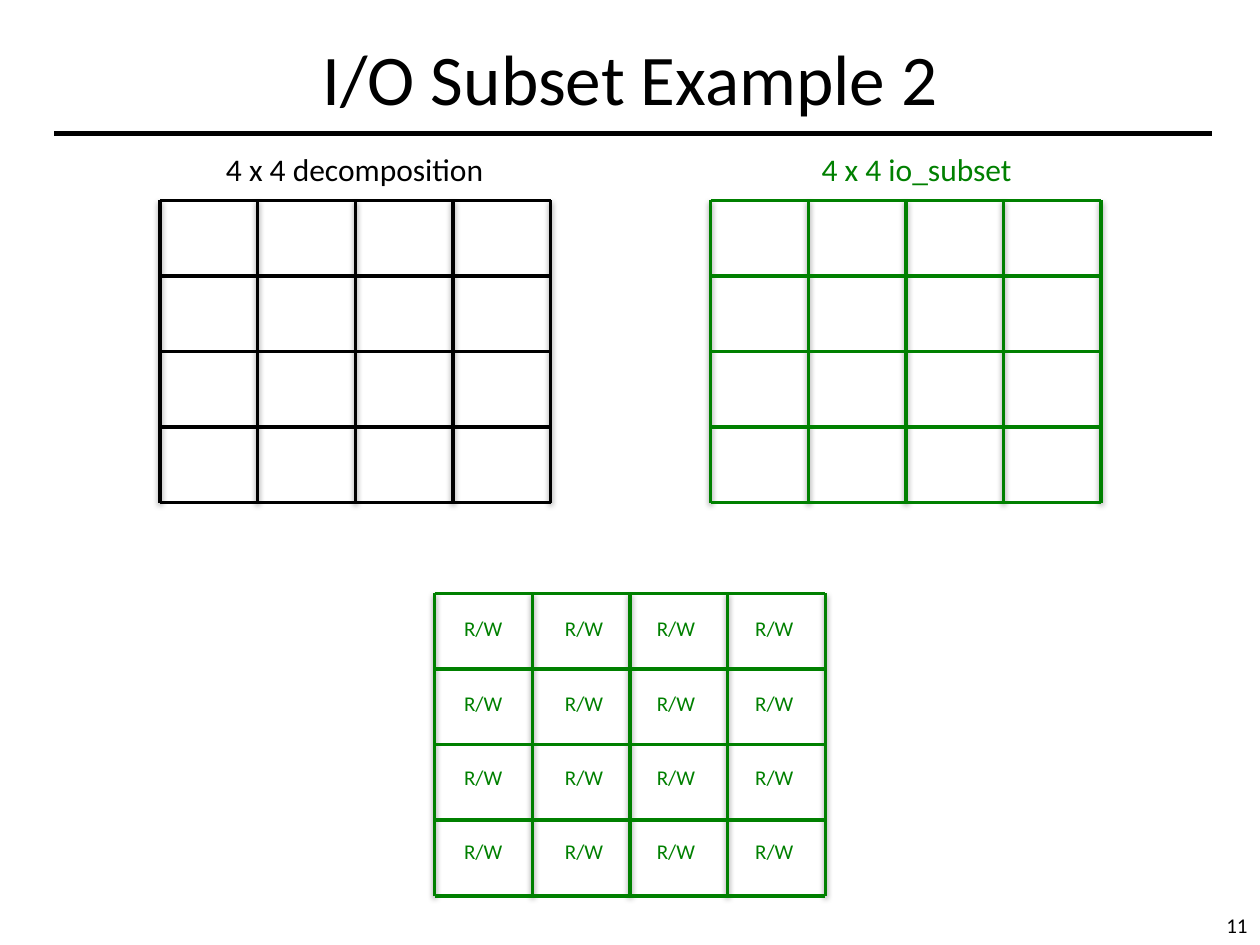
from dataclasses import dataclass

import lxml.etree
import pptx
import pptx.dml.color
import pptx.enum.shapes
import pptx.enum.text
import pptx.oxml.ns
import pptx.shapes.autoshape
import pptx.slide
import pptx.util

Inches = pptx.util.Inches
Align = pptx.enum.text.PP_ALIGN
Anchor = pptx.enum.text.MSO_ANCHOR


@dataclass(frozen=True)
class Theme:
    font: str = "Calibri"
    black: str = "000000"
    green: str = "008000"
    title_size: float = 40.7
    heading_size: float = 18
    small_size: float = 12
    rule_width: float = 3
    grid_width: float = 2


@dataclass(frozen=True)
class Box:
    left: float
    top: float
    width: float
    height: float


@dataclass(frozen=True)
class Grid:
    left: float
    top: float
    color: str


THEME = Theme()
CELLS = 4
GRID_WIDTH, GRID_HEIGHT = 3.1, 2.4
DECOMPOSITION = Grid(1.27, 1.59, THEME.black)
IO_SUBSET = Grid(5.64, 1.59, THEME.green)
ACCESS = Grid(3.45, 4.71, THEME.green)
ACCESS_LABEL_LEFTS = (3.58, 4.38, 5.11, 5.89)
ACCESS_LABEL_TOP, ACCESS_LABEL_PITCH = 4.84, 0.59


def rgb(color: str) -> pptx.dml.color.RGBColor:
    return pptx.dml.color.RGBColor.from_string(color)


def write_text(shape: pptx.shapes.autoshape.Shape, text: str, size: float,
               color: str, align: Align = Align.CENTER,
               anchor: Anchor = Anchor.TOP, wrap: bool = True) -> None:
    frame = shape.text_frame
    frame_format = {
        "auto_size": pptx.enum.text.MSO_AUTO_SIZE.NONE,
        "word_wrap": wrap,
        "vertical_anchor": anchor,
    }
    for name, value in frame_format.items():
        setattr(frame, name, value)
    paragraph = frame.paragraphs[0]
    paragraph.text = text
    paragraph.alignment = align
    font_format = {"name": THEME.font, "size": pptx.util.Pt(size)}
    run_font = paragraph.runs[0].font
    for name, value in font_format.items():
        setattr(run_font, name, value)
    run_font.color.rgb = rgb(color)


def add_label(slide: pptx.slide.Slide, box: Box, text: str, size: float,
              color: str, align: Align = Align.CENTER, wrap: bool = True) -> None:
    label = slide.shapes.add_textbox(Inches(box.left), Inches(box.top),
                                     Inches(box.width), Inches(box.height))
    write_text(label, text, size, color, align, wrap=wrap)


def add_line(slide: pptx.slide.Slide, start: tuple[float, float],
             end: tuple[float, float], color: str, width: float,
             shadowed: bool = False) -> None:
    line = slide.shapes.add_connector(
        pptx.enum.shapes.MSO_CONNECTOR.STRAIGHT,
        *(Inches(length) for length in (*start, *end)))
    line.line.color.rgb = rgb(color)
    line.line.width = pptx.util.Pt(width)
    qn = pptx.oxml.ns.qn
    effects = lxml.etree.SubElement(line._element.spPr, qn("a:effectLst"))
    if shadowed:
        shadow = lxml.etree.SubElement(effects, qn("a:outerShdw"), {
            "blurRad": "40000", "dist": "20000",
            "dir": "5400000", "rotWithShape": "0"})
        tint = lxml.etree.SubElement(shadow, qn("a:srgbClr"), val=THEME.black)
        lxml.etree.SubElement(tint, qn("a:alpha"), val="38000")


def add_grid(slide: pptx.slide.Slide, grid: Grid) -> None:
    """Draw shadowed vertical lines first, then plain horizontal ones."""
    right, bottom = grid.left + GRID_WIDTH, grid.top + GRID_HEIGHT
    for step in range(CELLS + 1):
        x = grid.left + step * GRID_WIDTH / CELLS
        add_line(slide, (x, grid.top), (x, bottom), grid.color,
                 THEME.grid_width, shadowed=True)
    for step in range(CELLS + 1):
        y = grid.top + step * GRID_HEIGHT / CELLS
        add_line(slide, (grid.left, y), (right, y), grid.color, THEME.grid_width)


def main() -> None:
    deck = pptx.Presentation()
    deck.slide_width, deck.slide_height = Inches(10), Inches(7.5)
    slide = deck.slides.add_slide(deck.slide_layouts[5])

    title = slide.shapes.title
    title_place = {"left": 0.5, "top": 0.26, "width": 9, "height": 0.7}
    for name, length in title_place.items():
        setattr(title, name, Inches(length))
    write_text(title, "I/O Subset Example 2", THEME.title_size, THEME.black,
               anchor=Anchor.MIDDLE)
    add_line(slide, (0.43, 1.06), (9.62, 1.06), THEME.black, THEME.rule_width)

    for grid in (ACCESS, DECOMPOSITION, IO_SUBSET):
        add_grid(slide, grid)
    add_label(slide, Box(1.66, 1.14, 2.31, 0.4), "4 x 4 decomposition",
              THEME.heading_size, DECOMPOSITION.color)
    add_label(slide, Box(6.12, 1.14, 2.31, 0.4), "4 x 4 io_subset",
              THEME.heading_size, IO_SUBSET.color)

    for left in ACCESS_LABEL_LEFTS:
        for row in range(CELLS):
            top = ACCESS_LABEL_TOP + row * ACCESS_LABEL_PITCH
            add_label(slide, Box(left, top, 0.51, 0.3), "R/W",
                      THEME.small_size, ACCESS.color, wrap=False)

    add_label(slide, Box(7.67, 7.19, 2.33, 0.31), "11", THEME.small_size,
              THEME.black, Align.RIGHT)
    deck.save("out.pptx")


if __name__ == "__main__":
    main()
